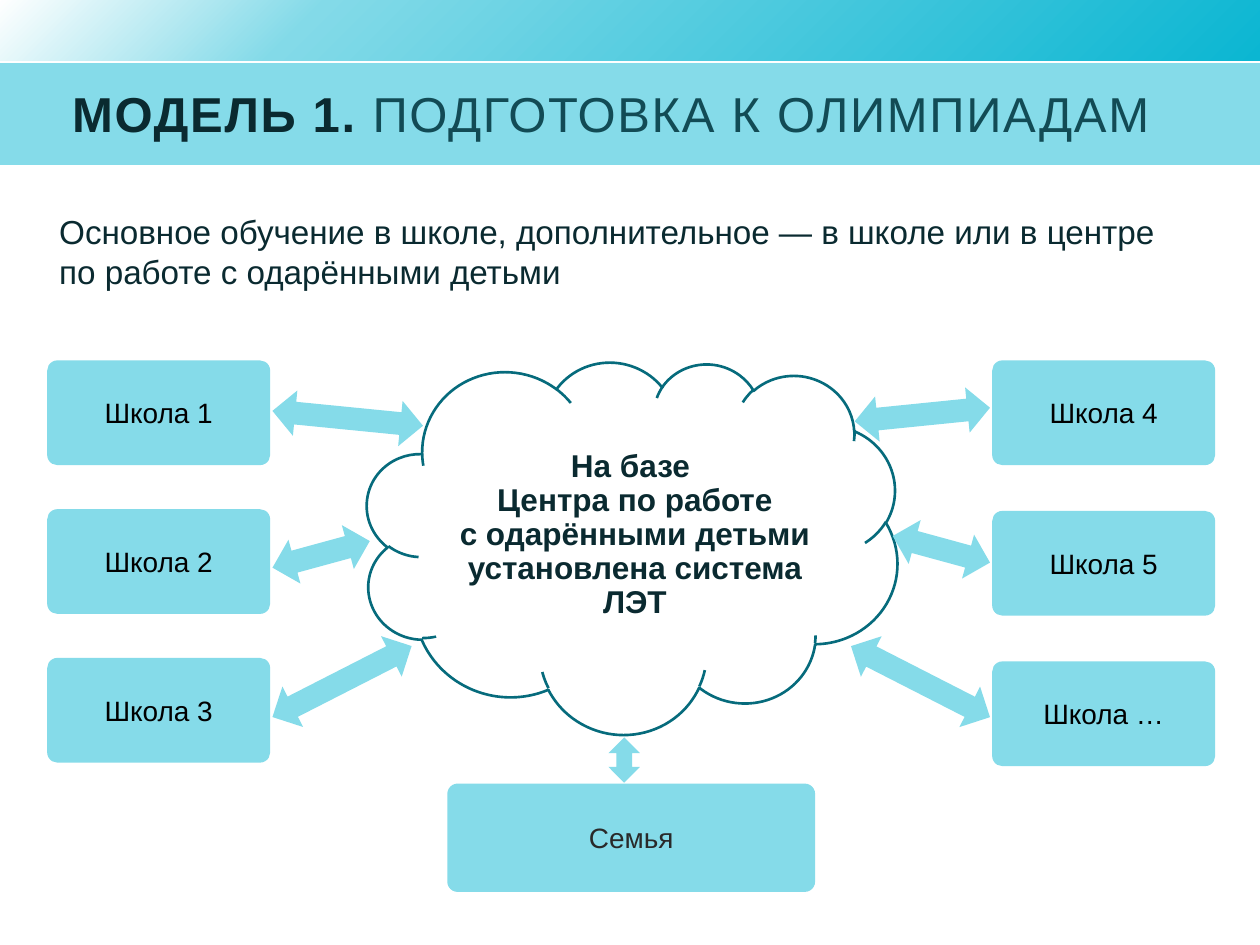
from dataclasses import dataclass
from math import atan2, degrees, hypot

from lxml import etree
from pptx import Presentation
from pptx.dml.color import RGBColor
from pptx.enum import shapes as es, text as et
from pptx.oxml import ns
from pptx.util import Pt


@dataclass(frozen=True)
class Theme:
    font: str = "Arial"
    aqua: str = "85DBE9"
    white: str = "FFFFFF"
    black: str = "000000"
    gray: str = "292929"
    ink: str = "0A2A30"
    teal: str = "124B55"
    edge: str = "066B7C"
    grad: tuple = ((0, "0BB6D2"), (75, "83DAE8"), (100, "FFFFFF"))
    head: float = 28
    lead: float = 19
    core: float = 18
    label: float = 16


T = Theme()
KIND = es.MSO_SHAPE

# Label, arrow start below the card top, arrow run towards the cloud
LEFT = [("Школа 1", 28.8, (86, 8.5)),
        ("Школа 2", 33.4, (55.6, -15.2)),
        ("Школа 3", 33.8, (79.5, -40.6))]
RIGHT = [("Школа 4", 27, (-77.3, 7.8)),
         ("Школа 5", 29.5, (-55.6, -15.2)),
         ("Школа …", 31.8, (-79.4, -40.6))]


def tint(run, size, color, bold=False):
    font = run.font
    font.name, font.size, font.bold = T.font, Pt(size), bold
    font.color.rgb = RGBColor.from_string(color)


def place(shape, box):
    shape.left, shape.top, shape.width, shape.height = map(Pt, box)


def draw(slide, kind, box, fill, line=None):
    shape = slide.shapes.add_shape(kind, *map(Pt, box))
    shape.shadow.inherit = False
    shape.fill.solid()
    shape.fill.fore_color.rgb = RGBColor.from_string(fill)
    if line:
        shape.line.color.rgb = RGBColor.from_string(line)
        shape.line.width = Pt(1.5)
    else:
        shape.line.fill.background()
    return shape


def raise_top(slide, shape):
    slide.shapes._spTree.append(shape._element)


def radial(shape):
    """Fill with a gradient spreading from the lower right corner."""
    shape.fill.gradient()
    grad = shape._element.spPr.find(ns.qn("a:gradFill"))
    for child in list(grad):
        grad.remove(child)
    stops = etree.SubElement(grad, ns.qn("a:gsLst"))
    for pos, color in T.grad:
        stop = etree.SubElement(stops, ns.qn("a:gs"), pos=str(pos * 1000))
        etree.SubElement(stop, ns.qn("a:srgbClr"), val=color)
    way = etree.SubElement(grad, ns.qn("a:path"), path="circle")
    etree.SubElement(way, ns.qn("a:fillToRect"), l="100000", t="100000")


def header(slide, box):
    x, y, w, h = box
    radial(draw(slide, KIND.RECTANGLE, (x, y - 1.4, w, 36), T.aqua))
    draw(slide, KIND.RECTANGLE, (x, y + 36, w, h - 36), T.aqua)
    title = slide.shapes.title
    place(title, (x, y + 36.4, w, h - 37.8))
    raise_top(slide, title)
    frame = title.text_frame
    frame.vertical_anchor = et.MSO_ANCHOR.MIDDLE
    frame.auto_size = et.MSO_AUTO_SIZE.NONE
    par = frame.paragraphs[0]
    par.alignment = et.PP_ALIGN.LEFT
    par._p.get_or_add_pPr().set("marL", str(Pt(34)))
    for words, color, bold in (("МОДЕЛЬ 1. ", T.ink, True),
                               ("ПОДГОТОВКА К ОЛИМПИАДАМ", T.teal, False)):
        run = par.add_run()
        run.text = words
        tint(run, T.head, color, bold)
        run._r.get_or_add_rPr().set("spc", "100")


def intro(slide, box):
    frame = slide.shapes.add_textbox(*map(Pt, box)).text_frame
    frame.word_wrap = True
    frame.text = ("Основное обучение в школе, дополнительное\u00a0— в школе или "
                  "в\u00a0центре по\u00a0работе с одарёнными детьми")
    tint(frame.paragraphs[0].runs[0], T.lead, T.ink)


def card(slide, box, words, color):
    shape = draw(slide, KIND.ROUNDED_RECTANGLE, box, T.aqua)
    shape.adjustments[0] = 0.096
    frame = shape.text_frame
    frame.text = words
    frame.vertical_anchor = et.MSO_ANCHOR.MIDDLE
    par = frame.paragraphs[0]
    par.alignment = et.PP_ALIGN.CENTER
    tint(par.runs[0], T.label, color)


def arrow(slide, start, run, width=26):
    (x, y), (dx, dy) = start, run
    size = hypot(dx, dy)
    box = (x + dx / 2 - width / 2, y + dy / 2 - size / 2, width, size)
    shape = draw(slide, KIND.UP_DOWN_ARROW, box, T.aqua)
    shape.rotation = degrees(atan2(dx, -dy)) % 180


def schools(slide, box, items):
    """Stack the school cards, each with an arrow to the cloud."""
    x, y, w, h = box
    tall = 59.8
    step = (h - tall) / (len(items) - 1)
    for i, (name, drop, run) in enumerate(items):
        top = y + i * step
        card(slide, (x, top, w, tall), name, T.black)
        side = x + w + 1.3 if run[0] > 0 else x - 1.3
        arrow(slide, (side, top + drop), run)


def center(slide, box):
    x, y, w, h = box
    cloud = draw(slide, KIND.CLOUD, box, T.white, T.edge)
    cloud.rotation = 7.4
    body = slide.placeholders[1]
    place(body, (x + 36, y + 46, 237.6, 114.5))
    raise_top(slide, body)
    body.fill.solid()
    body.fill.fore_color.rgb = RGBColor.from_string(T.white)
    frame = body.text_frame
    frame.text = ("На базе \nЦентра по работе с\u00a0одарёнными детьми "
                  "установлена система ЛЭТ")
    frame.vertical_anchor = et.MSO_ANCHOR.MIDDLE
    frame.auto_size = et.MSO_AUTO_SIZE.NONE
    frame.margin_left = frame.margin_right = Pt(3.6)
    for par in frame.paragraphs:
        props = par._p.get_or_add_pPr()
        props.set("marL", "0")
        props.set("indent", "0")
        etree.SubElement(props, ns.qn("a:buNone"))
        par.alignment = et.PP_ALIGN.CENTER
        par.line_spacing = 0.9
        par.space_before = Pt(0)
        tint(par.runs[0], T.core, T.ink, True)


def family(slide, box):
    x, y, w, h = box
    card(slide, box, "Семья", T.gray)
    arrow(slide, (x + w / 2 - 4, y - 26.4), (0, 25.9), 18)


def main():
    deck = Presentation()
    deck.slide_width, deck.slide_height = Pt(720), Pt(540)
    slide = deck.slides.add_slide(deck.slide_layouts[1])
    header(slide, (0, 0, 720, 94.3))
    intro(slide, (26.8, 117.4, 670, 53.3))
    center(slide, (208, 202.6, 305.3, 216.7))
    schools(slide, (27, 206, 127.4, 229.8), LEFT)
    schools(slide, (567, 206, 127.4, 231.8), RIGHT)
    family(slide, (255.6, 447.8, 210.2, 61.9))
    deck.save("out.pptx")


if __name__ == "__main__":
    main()
